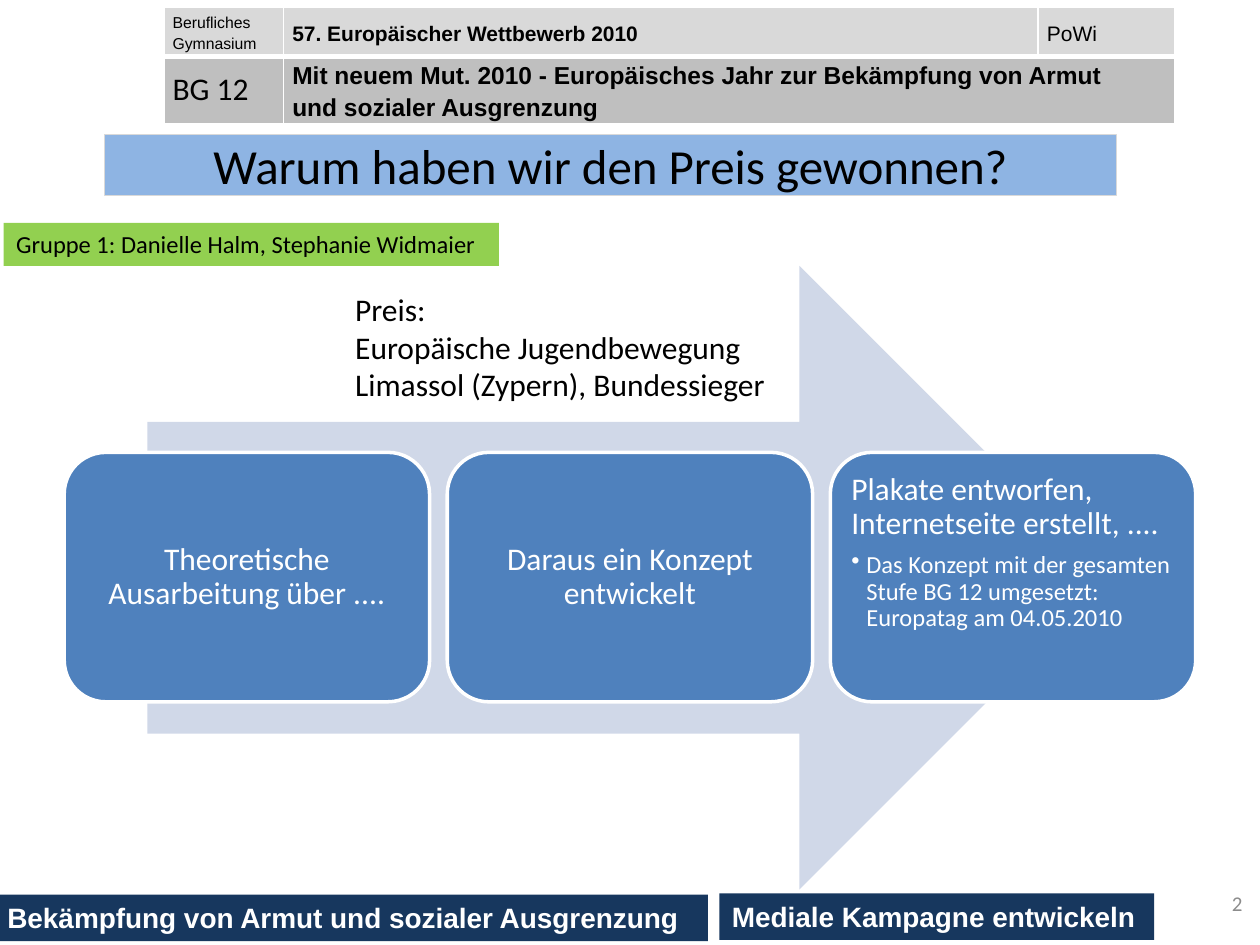
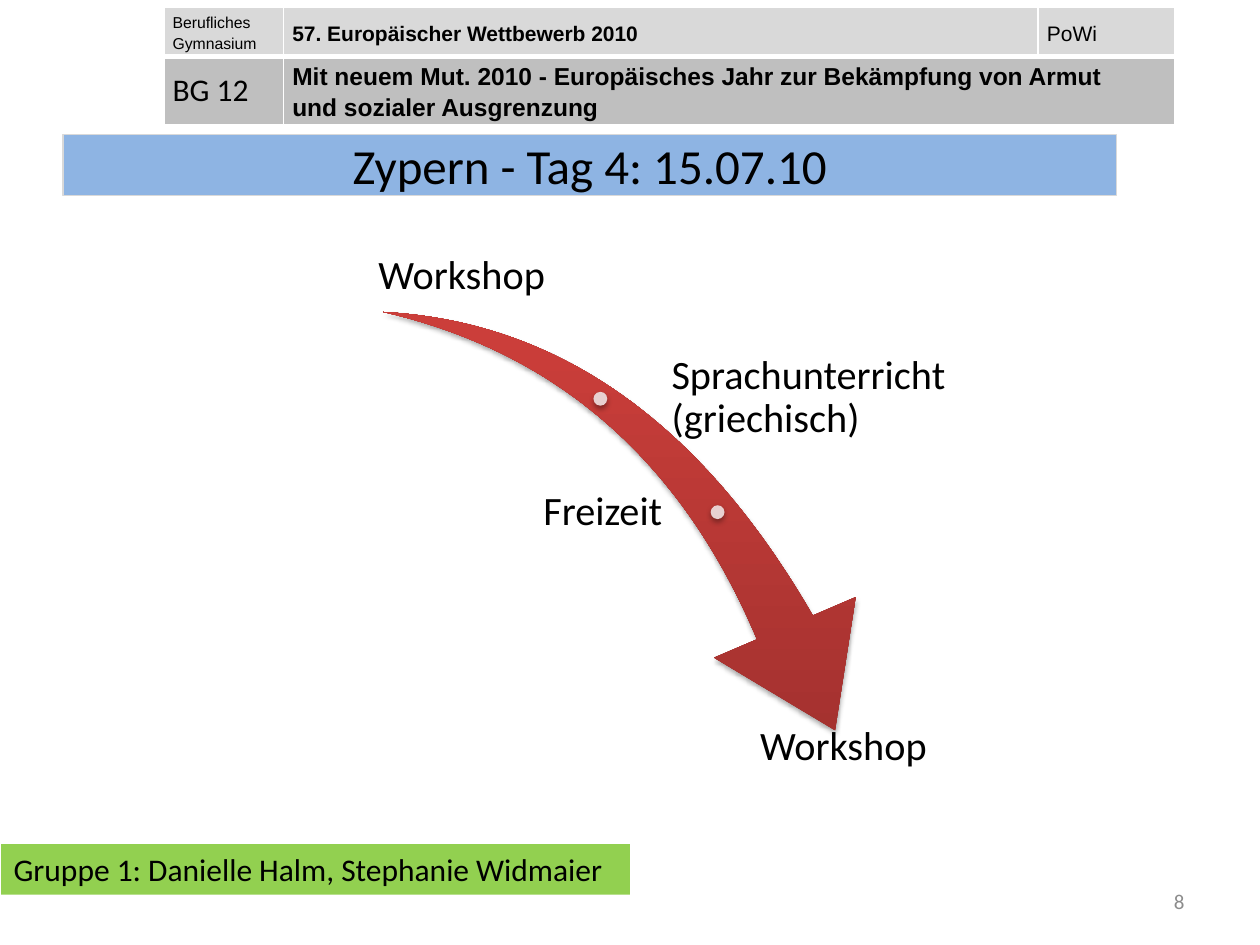
from dataclasses import dataclass

from lxml.etree import SubElement
from pptx import Presentation
from pptx.dml.color import RGBColor
from pptx.enum.shapes import MSO_SHAPE
from pptx.enum.text import MSO_ANCHOR, PP_ALIGN
from pptx.oxml import parse_xml
from pptx.oxml.ns import nsdecls, qn
from pptx.util import Inches, Pt


@dataclass(frozen=True)
class Theme:
    body_font: str = "Calibri"
    header_font: str = "Arial"
    black: str = "000000"
    white: str = "FFFFFF"
    header_light: str = "D9D9D9"
    header_dark: str = "BFBFBF"
    title_fill: str = "8EB4E3"
    group_fill: str = "92D050"
    banner_fill: str = "17375E"
    arrow_fill: str = "D0D8E8"
    step_fill: str = "4F81BD"
    dot_fill: str = "E8D0D0"
    number_grey: str = "8C8C8C"
    swoosh_stops: tuple = ((0, "9C2F2D"), (80, "CB3E3A"), (100, "CE3B37"))
    title_size: float = 28
    path_size: float = 23
    text_size: float = 18
    banner_size: float = 16
    small_size: float = 14
    number_size: float = 12


THEME = Theme()
GROUP = "Gruppe 1: Danielle Halm, Stephanie Widmaier"


def rgb(color):
    return RGBColor.from_string(color)


def write(frame, lines, size, color=THEME.black, font=THEME.body_font, bold=False,
          align=PP_ALIGN.LEFT, anchor=MSO_ANCHOR.TOP, margin=None, spacing=None):
    """Fill a text frame with one paragraph per line."""
    frame.word_wrap = True
    frame.vertical_anchor = anchor
    if margin is not None:
        frame.margin_left = frame.margin_right = Inches(margin)
        frame.margin_top = frame.margin_bottom = Inches(margin)
    for index, line in enumerate(lines):
        paragraph = frame.paragraphs[0] if index == 0 else frame.add_paragraph()
        paragraph.text = line
        paragraph.alignment = align
        if spacing:
            paragraph.line_spacing = spacing
        style_font(paragraph, size, color, font, bold)


def style_font(paragraph, size, color, font=THEME.body_font, bold=False):
    paragraph.font.size = Pt(size)
    paragraph.font.name = font
    paragraph.font.bold = bold
    paragraph.font.color.rgb = rgb(color)


def add_text(slide, box, lines, size, **style):
    shape = slide.shapes.add_textbox(*map(Inches, box))
    write(shape.text_frame, lines, size, **style)


def add_block(slide, kind, box, fill=None, line=None, line_width=0.75):
    shape = slide.shapes.add_shape(kind, *map(Inches, box))
    shape.shadow.inherit = False
    if fill:
        shape.fill.solid()
        shape.fill.fore_color.rgb = rgb(fill)
    if line:
        shape.line.color.rgb = rgb(line)
        shape.line.width = Pt(line_width)
    else:
        shape.line.fill.background()
    return shape


def add_label(slide, box, text, size, fill, line=None, **style):
    label = add_block(slide, MSO_SHAPE.RECTANGLE, box, fill, line)
    write(label.text_frame, [text], size, **style)


def add_soft_shadow(shape):
    effects = shape._element.spPr.find(qn("a:effectLst"))
    effects.append(parse_xml(
        f'<a:outerShdw {nsdecls("a")} blurRad="{Pt(3.1)}" dist="{Pt(1.8)}" dir="5400000" '
        f'rotWithShape="0"><a:srgbClr val="{THEME.black}"><a:alpha val="35000"/>'
        '</a:srgbClr></a:outerShdw>'))


def set_gradient(shape, stops):
    """Vertical gradient from bottom to top that ignores the shape's rotation."""
    shape.fill.gradient()
    gradient = shape._element.spPr.find(qn("a:gradFill"))
    stop_xml = "".join(f'<a:gs pos="{position * 1000}"><a:srgbClr val="{color}"/></a:gs>'
                       for position, color in stops)
    gradient.getparent().replace(gradient, parse_xml(
        f'<a:gradFill {nsdecls("a")} rotWithShape="0"><a:gsLst>{stop_xml}</a:gsLst>'
        '<a:lin ang="16200000" scaled="0"/></a:gradFill>'))


def set_borders(cell, top, bottom):
    properties = cell._tc.get_or_add_tcPr()
    widths = {"a:lnL": 1, "a:lnR": 1, "a:lnT": top, "a:lnB": bottom}
    for index, (tag, width) in enumerate(widths.items()):
        properties.insert(index, parse_xml(
            f'<{tag} {nsdecls("a")} w="{Pt(width)}"><a:solidFill>'
            f'<a:srgbClr val="{THEME.white}"/></a:solidFill></{tag}>'))


def add_header(slide):
    table = slide.shapes.add_table(2, 3, *map(Inches, (1.3, 0.06, 8.02, 0.92))).table
    table.first_row = table.horz_banding = False
    for column, width in zip(table.columns, (0.95, 5.99, 1.08)):
        column.width = Inches(width)
    for row, height in zip(table.rows, (0.39, 0.53)):
        row.height = Inches(height)
    table.cell(1, 1).merge(table.cell(1, 2))

    arial = {"font": THEME.header_font, "spacing": 1.15}
    contents = {
        (0, 0): (["Berufliches Gymnasium"], 9, arial),
        (0, 1): (["57. Europäischer Wettbewerb 2010"], 12, {**arial, "bold": True}),
        (0, 2): (["PoWi"], 12, arial),
        (1, 0): (["BG 12"], THEME.text_size, {}),
        (1, 1): (["Mit neuem Mut. 2010 - Europäisches Jahr zur Bekämpfung von Armut",
                  "und sozialer Ausgrenzung"], THEME.small_size, {**arial, "bold": True}),
    }
    for row in range(2):
        for column in range(3):
            cell = table.cell(row, column)
            cell.fill.solid()
            cell.fill.fore_color.rgb = rgb((THEME.header_light, THEME.header_dark)[row])
            set_borders(cell, *((1, 3), (3, 1))[row])
            if (row, column) in contents:
                lines, size, style = contents[row, column]
                write(cell.text_frame, lines, size, **style)
                cell.vertical_anchor = MSO_ANCHOR.MIDDLE
                cell.margin_left = cell.margin_right = Inches(0.07)
                cell.margin_top = cell.margin_bottom = 0


def start_slide(presentation, title, title_left, number, number_box):
    """Blank slide with the shared header table, title band and page number."""
    slide = presentation.slides.add_slide(presentation.slide_layouts[6])
    add_header(slide)
    add_label(slide, (title_left, 1.07, 8.86 - title_left, 0.48), title, THEME.title_size,
              THEME.title_fill, THEME.header_light,
              align=PP_ALIGN.CENTER, anchor=MSO_ANCHOR.MIDDLE)
    add_text(slide, number_box, [number], THEME.number_size, color=THEME.number_grey,
             align=PP_ALIGN.RIGHT, anchor=MSO_ANCHOR.MIDDLE)
    return slide


def add_step(slide, index, text, detail=None):
    step = add_block(slide, MSO_SHAPE.ROUNDED_RECTANGLE, (0.51 + 3.04 * index, 3.59, 2.9, 1.98),
                     THEME.step_fill, THEME.white, 2)
    frame = step.text_frame
    write(frame, [text], THEME.text_size, color=THEME.white, margin=0.07, spacing=0.9,
          align=PP_ALIGN.LEFT if detail else PP_ALIGN.CENTER,
          anchor=MSO_ANCHOR.TOP if detail else MSO_ANCHOR.MIDDLE)
    if detail:
        frame.paragraphs[0].space_after = Pt(6.3)
        bullet = frame.add_paragraph()
        bullet.text = detail
        bullet.alignment = PP_ALIGN.LEFT
        bullet.line_spacing = 0.9
        properties = bullet._p.get_or_add_pPr()
        properties.set("marL", str(Inches(0.12)))
        properties.set("indent", str(-Inches(0.12)))
        SubElement(properties, qn("a:buChar")).set("char", "•")
        style_font(bullet, THEME.small_size, THEME.white)


def build_prize_slide(presentation):
    slide = start_slide(presentation, "Warum haben wir den Preis gewonnen?", 0.83,
                        "2", (7.63, 6.97, 2.33, 0.4))

    # Process arrow with its three steps
    add_block(slide, MSO_SHAPE.RIGHT_ARROW, (1.17, 2.11, 7.65, 4.95), THEME.arrow_fill)
    steps = (
        ("Theoretische Ausarbeitung über ....",),
        ("Daraus ein Konzept entwickelt",),
        ("Plakate entworfen, Internetseite erstellt, ....",
         "Das Konzept mit der gesamten Stufe BG 12 umgesetzt: Europatag am 04.05.2010"),
    )
    for index, step in enumerate(steps):
        add_step(slide, index, *step)

    # Group, prize and topic banners
    add_label(slide, (0.03, 1.77, 3.93, 0.34), GROUP, THEME.small_size, THEME.group_fill)
    add_text(slide, (2.72, 2.25, 3.49, 1.01),
             ["Preis:", "Europäische Jugendbewegung", "Limassol (Zypern), Bundessieger"],
             THEME.text_size)
    banners = (
        ((-0.04, 7.1, 5.66, 0.37), "Bekämpfung von Armut und sozialer Ausgrenzung"),
        ((5.71, 7.09, 3.45, 0.37), "Mediale Kampagne entwickeln"),
    )
    for box, text in banners:
        add_label(slide, box, text, THEME.banner_size, THEME.banner_fill,
                  color=THEME.white, font=THEME.header_font, bold=True)


def build_day_slide(presentation):
    slide = start_slide(presentation, "Zypern - Tag 4: 15.07.10", 0.5,
                        "8", (7.17, 6.95, 2.33, 0.4))

    # Curved arrow with its two stops
    swoosh = add_block(slide, MSO_SHAPE.SWOOSH_ARROW, (2.95, 2.6, 4.21, 2.94))
    swoosh.rotation = 73.3
    swoosh.adjustments[0] = 0.163
    swoosh.adjustments[1] = 0.314
    set_gradient(swoosh, THEME.swoosh_stops)
    add_soft_shadow(swoosh)
    for left, top in ((4.71, 3.11), (5.64, 4.01)):
        add_soft_shadow(add_block(slide, MSO_SHAPE.OVAL, (left, top, 0.11, 0.11),
                                  THEME.dot_fill))

    # Activities along the arrow
    activities = (
        ((2.67, 1.62, 1.99, 0.78), "Workshop", PP_ALIGN.CENTER, MSO_ANCHOR.BOTTOM),
        ((5.3, 2.77, 2.74, 0.78), "Sprachunterricht (griechisch)", PP_ALIGN.LEFT,
         MSO_ANCHOR.MIDDLE),
        ((2.67, 3.68, 2.69, 0.78), "Freizeit ", PP_ALIGN.RIGHT, MSO_ANCHOR.MIDDLE),
        ((5.35, 5.73, 2.69, 0.78), "Workshop", PP_ALIGN.CENTER, MSO_ANCHOR.TOP),
    )
    for box, text, align, anchor in activities:
        add_text(slide, box, [text], THEME.path_size, align=align, anchor=anchor,
                 margin=0.03, spacing=0.9)

    add_label(slide, (0.01, 6.7, 4.99, 0.4), GROUP, THEME.text_size, THEME.group_fill)


def main():
    presentation = Presentation()
    presentation.slide_width = Inches(10)
    presentation.slide_height = Inches(7.5)
    build_prize_slide(presentation)
    build_day_slide(presentation)
    presentation.save("out.pptx")


if __name__ == "__main__":
    main()
